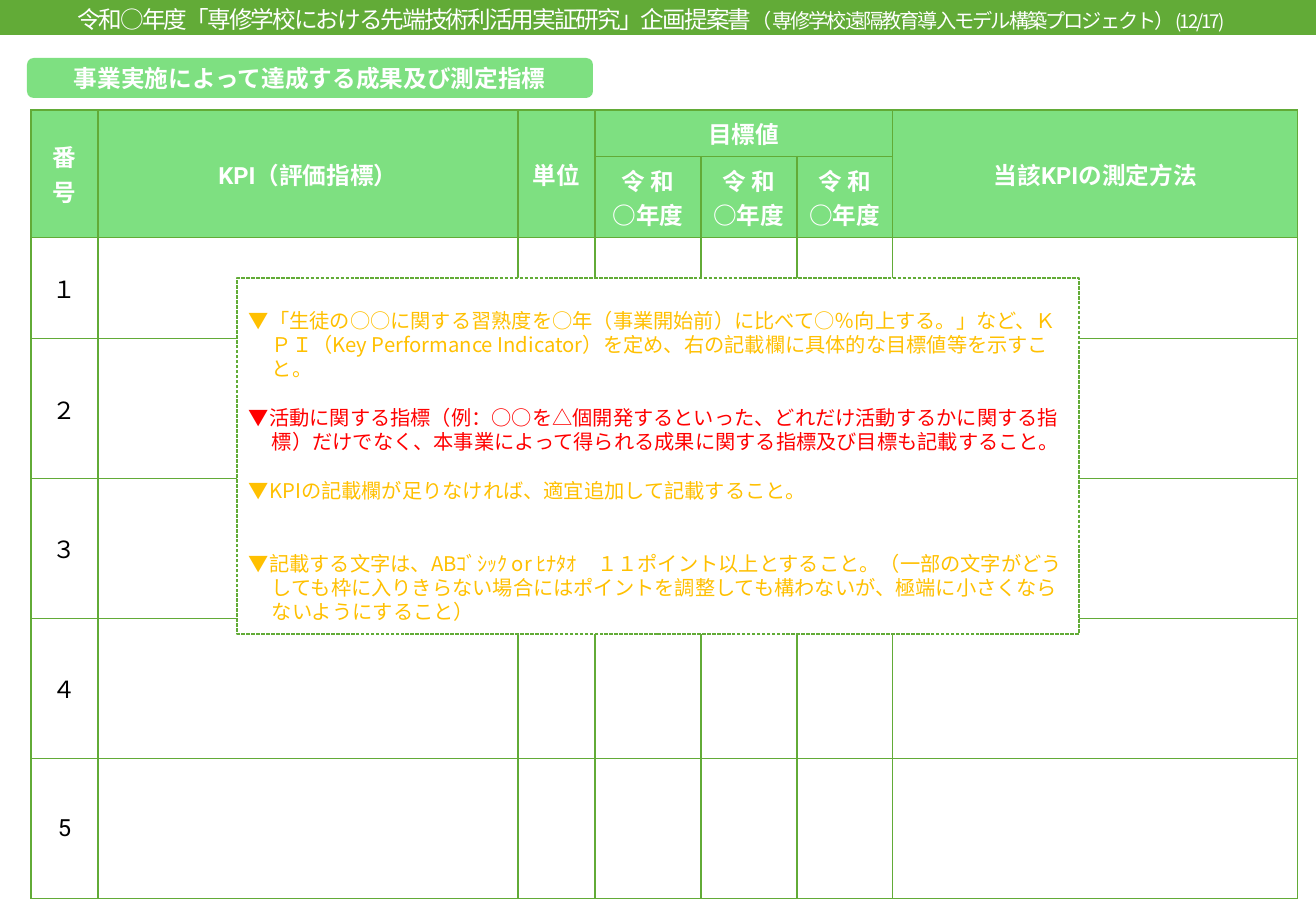
from dataclasses import dataclass

from lxml import etree
from pptx import Presentation
from pptx.dml.color import RGBColor
from pptx.enum.dml import MSO_LINE
from pptx.enum.shapes import MSO_SHAPE
from pptx.enum.text import MSO_ANCHOR, MSO_AUTO_SIZE, PP_ALIGN
from pptx.oxml.ns import qn
from pptx.util import Emu, Pt

PX = 7526  # EMU per px
TITLE_ONLY = 5
RECT, ROUND_RECT = MSO_SHAPE.RECTANGLE, MSO_SHAPE.ROUNDED_RECTANGLE
TOP, MIDDLE = MSO_ANCHOR.TOP, MSO_ANCHOR.MIDDLE
LEFT, CENTER = PP_ALIGN.LEFT, PP_ALIGN.CENTER
DASH = MSO_LINE.SQUARE_DOT


@dataclass(frozen=True)
class Theme:
    banner: str = "62AB37"
    head: str = "7EE081"
    white: str = "FFFFFF"
    black: str = "000000"
    amber: str = "FFC000"
    red: str = "FF0000"
    latin: str = "Roboto"
    cjk: str = "Noto Sans CJK JP"
    body: int = 14
    note: int = 12
    page: int = 11
    note_line: float = 14.4


T = Theme()

TITLE_RUNS = [
    ("令和○年度「専修学校における先端技術利活用実証研究」企画提案書", T.body),
    ("（ 専修学校遠隔教育導入モデル構築プロジェクト）", T.note),
    ("(12/17)", T.page),
]
COLS = [67, 420, 77, 106, 96, 96, 405]
ROWS = [46, 81, 101, 140, 140, 140, 140]
# Column, text, rows spanned, columns spanned
HEADERS = [
    (0, "番号", 2, 1),
    (1, "KPI（評価指標）", 2, 1),
    (2, "単位", 2, 1),
    (3, "目標値", 1, 3),
    (6, "当該KPIの測定方法", 2, 1),
]
YEAR = ["令 和", "○年度"]
YEAR_COLS = (3, 4, 5)
NUMBERS = ["１", "２", "３", "４", "5"]
# Text, colour, lines of space before
NOTES = [
    ("▼「生徒の○○に関する習熟度を○年（事業開始前）に比べて○％向上する。」など、"
     "ＫＰＩ（Key Performance Indicator）を定め、右の記載欄に具体的な目標値等を示すこと。",
     T.amber, 0),
    ("▼活動に関する指標（例：○○を△個開発するといった、どれだけ活動するかに関する指標）"
     "だけでなく、本事業によって得られる成果に関する指標及び目標も記載すること。",
     T.red, 1),
    ("▼KPIの記載欄が足りなければ、適宜追加して記載すること。", T.amber, 1),
    ("▼記載する文字は、ABｺﾞｼｯｸ or ﾋﾅﾀｵ　１１ポイント以上とすること。"
     "（一部の文字がどうしても枠に入りきらない場合にはポイントを調整しても構わないが、"
     "極端に小さくならないようにすること）", T.amber, 2),
]


def px(n):
    return Emu(n * PX)


def rgb(color):
    return RGBColor.from_string(color)


def style(p, size, color, bold=False, align=CENTER, latin=T.latin):
    p.alignment = align
    f = p.font
    f.size, f.bold, f.name = Pt(size), bold, latin
    f.color.rgb = rgb(color)
    props = p._p.pPr.find(qn("a:defRPr"))
    etree.SubElement(props, qn("a:ea"), typeface=T.cjk)


def write(tf, lines, color, bold=False, latin=T.latin):
    for i, line in enumerate(lines):
        p = tf.paragraphs[0] if i == 0 else tf.add_paragraph()
        p.add_run().text = line
        style(p, T.body, color, bold, latin=latin)


def add_box(s, kind, x, y, w, h, fill):
    sp = s.shapes.add_shape(kind, px(x), px(y), px(w), px(h))
    sp.shadow.inherit = False
    sp.fill.solid()
    sp.fill.fore_color.rgb = rgb(fill)
    sp.line.fill.background()
    sp.text_frame.word_wrap = True
    return sp


def add_title(s):
    sp = s.shapes.title
    sp.left, sp.top, sp.width, sp.height = px(0), px(0), px(1316), px(35)
    sp.fill.solid()
    sp.fill.fore_color.rgb = rgb(T.banner)
    tf = sp.text_frame
    tf.auto_size = MSO_AUTO_SIZE.NONE
    tf.vertical_anchor = TOP
    tf.margin_left, tf.margin_right = px(12), px(26)
    tf.margin_top, tf.margin_bottom = px(5), px(0)
    p = tf.paragraphs[0]
    for text, size in TITLE_RUNS:
        r = p.add_run()
        r.text = text
        r.font.size = Pt(size)
        r._r.get_or_add_rPr().set("spc", "-120")
    style(p, T.body, T.white, latin=T.cjk)


def add_heading(s):
    sp = add_box(s, ROUND_RECT, 27, 58, 566, 40, T.head)
    sp.text_frame.vertical_anchor = MIDDLE
    write(sp.text_frame, ["事業実施によって達成する成果及び測定指標"], T.white, True)


def format_cell(cell, fill=None):
    cell.vertical_anchor = MIDDLE
    props = cell._tc.get_or_add_tcPr()
    for side in ("lnL", "lnR", "lnT", "lnB"):
        ln = etree.SubElement(props, qn(f"a:{side}"), w=str(Pt(1)))
        solid = etree.SubElement(ln, qn("a:solidFill"))
        etree.SubElement(solid, qn("a:srgbClr"), val=T.banner)
    if fill:
        cell.fill.solid()
        cell.fill.fore_color.rgb = rgb(fill)
    else:
        cell.fill.background()


def add_kpi_table(s):
    frame = s.shapes.add_table(len(ROWS), len(COLS), px(31), px(110),
                               px(sum(COLS)), px(sum(ROWS)))
    table = frame.table
    table.first_row = table.horz_banding = False
    for col, w in zip(table.columns, COLS):
        col.width = px(w)
    for i, (row, h) in enumerate(zip(table.rows, ROWS)):
        row.height = px(h)
        for cell in row.cells:
            format_cell(cell, T.head if i < 2 else None)
    # Two header rows
    for c, text, down, across in HEADERS:
        cell = table.cell(0, c)
        cell.merge(table.cell(down - 1, c + across - 1))
        write(cell.text_frame, [text], T.white, True)
    for c in YEAR_COLS:
        write(table.cell(1, c).text_frame, YEAR, T.white, True, T.cjk)
    # Row numbers
    for i, number in enumerate(NUMBERS, 2):
        write(table.cell(i, 0).text_frame, [number], T.black)


def add_notes(s):
    sp = add_box(s, RECT, 237, 278, 842, 356, T.white)
    sp.line.color.rgb = rgb(T.banner)
    sp.line.width = Pt(0.75)
    sp.line.dash_style = DASH
    tf = sp.text_frame
    tf.vertical_anchor = TOP
    tf.margin_top = px(30)
    for i, (text, color, gap) in enumerate(NOTES):
        p = tf.paragraphs[0] if i == 0 else tf.add_paragraph()
        p.add_run().text = text
        p.line_spacing = Pt(T.note_line)
        if gap:
            p.space_before = Pt(gap * T.note_line)
        props = p._p.get_or_add_pPr()
        props.set("marL", str(px(23)))
        props.set("indent", str(px(-23)))
        style(p, T.note, color, align=LEFT, latin=T.cjk)


def main():
    prs = Presentation()
    prs.slide_width, prs.slide_height = px(1316), px(911)
    s = prs.slides.add_slide(prs.slide_layouts[TITLE_ONLY])
    add_title(s)
    add_heading(s)
    add_kpi_table(s)
    add_notes(s)
    prs.save("out.pptx")


if __name__ == "__main__":
    main()
